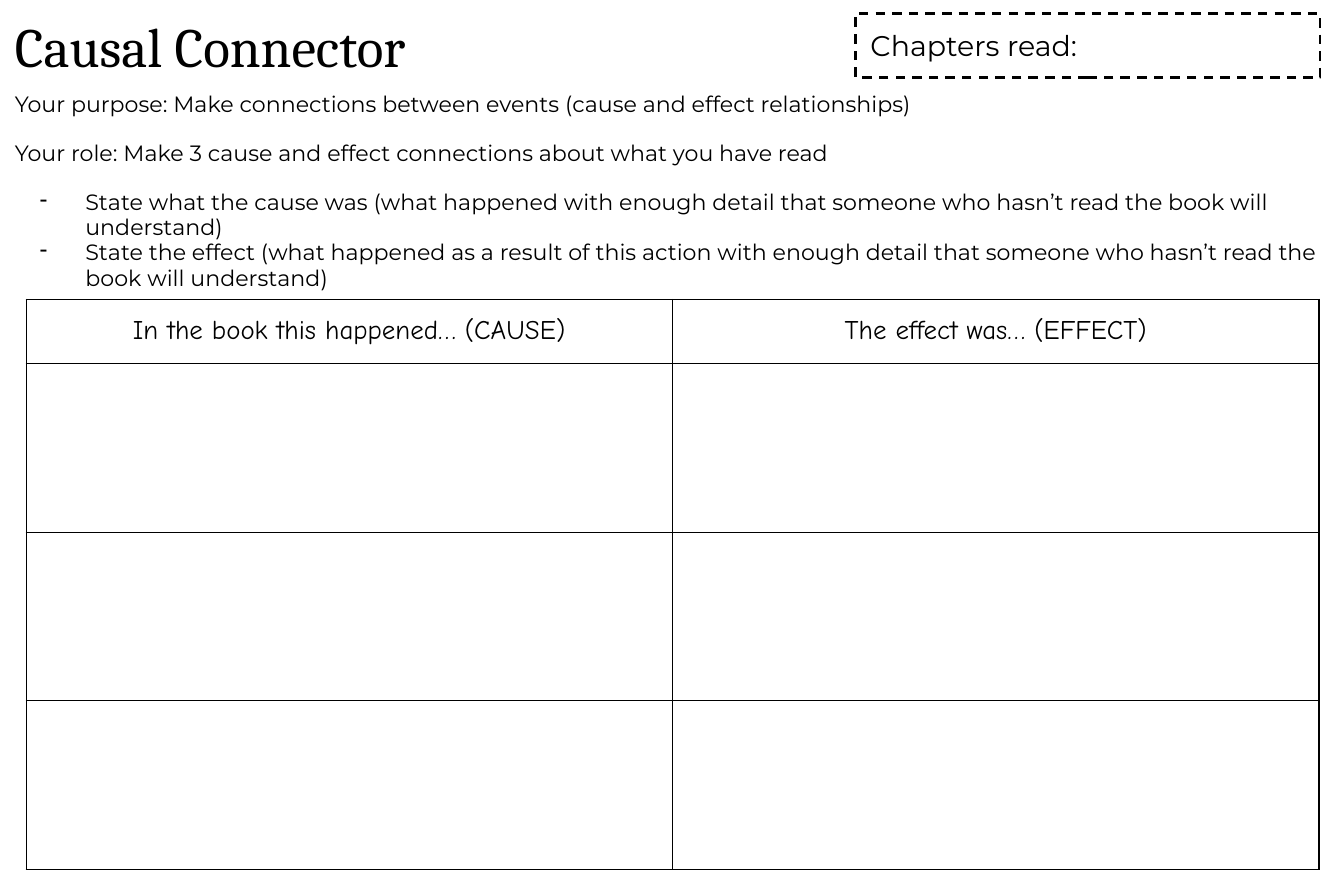
from dataclasses import dataclass

from lxml import etree
from pptx import Presentation
from pptx.dml.color import RGBColor
from pptx.enum.dml import MSO_LINE
from pptx.enum.shapes import MSO_SHAPE
from pptx.enum.text import MSO_ANCHOR, MSO_AUTO_SIZE, PP_ALIGN
from pptx.oxml.ns import qn
from pptx.util import Inches, Pt

DASH = MSO_LINE.DASH
RECT = MSO_SHAPE.RECTANGLE
TOP, MIDDLE = MSO_ANCHOR.TOP, MSO_ANCHOR.MIDDLE
GROW = MSO_AUTO_SIZE.SHAPE_TO_FIT_TEXT
LEFT, CENTER = PP_ALIGN.LEFT, PP_ALIGN.CENTER


@dataclass(frozen=True)
class Theme:
    """Colours, type styles and spacing of the worksheet."""

    ink: str = "000000"
    title: tuple = ("Cambria", 35)
    body: tuple = ("Montserrat", 14)
    label: tuple = ("Montserrat", 18)
    head: tuple = ("Comic Neue", 17)
    inset: float = 0.13
    dash: float = 1.5
    rule: float = 0.75
    gap: float = 15
    lead: float = 0.95


THEME = Theme()
INK = RGBColor.from_string(THEME.ink)
WIDTH, HEIGHT = Inches(11.81), Inches(7.87)

GOALS = [
    "Your purpose: Make connections between events (cause and effect relationships)",
    "Your role: Make 3 cause and effect connections about what you have read",
]
STEPS = [
    "State what the cause was (what happened with enough detail that someone who hasn’t read the book will understand)",
    "State the effect (what happened as a result of this action with enough detail that someone who hasn’t read the book will understand)",
]
HEADS = ["In the book this happened… (CAUSE)", "The effect was… (EFFECT)"]


def area(left, top, width, height):
    """Turn percentages of the slide into a box."""
    return (int(WIDTH * left / 100), int(HEIGHT * top / 100),
            int(WIDTH * width / 100), int(HEIGHT * height / 100))


def style(para, kind, align=LEFT):
    """Set the font and alignment of a paragraph."""
    para.alignment = align
    for run in para.runs:
        run.font.name, size = kind
        run.font.size = Pt(size)
        run.font.color.rgb = INK


def prepare(frame, anchor):
    """Set wrapping, insets and anchor of a text frame."""
    frame.word_wrap = True
    frame.vertical_anchor = anchor
    frame.margin_left = frame.margin_right = Inches(THEME.inset)
    frame.margin_top = frame.margin_bottom = Inches(THEME.inset)


def paint(parent, tag):
    """Add an ink-coloured element to a parent."""
    node = etree.SubElement(parent, qn(tag))
    etree.SubElement(node, qn("a:srgbClr"), val=THEME.ink)


def add_title(slide, box):
    """Place the worksheet title."""
    frame = slide.shapes.add_textbox(*box).text_frame
    prepare(frame, MIDDLE)
    frame.text = "Causal Connector"
    style(frame.paragraphs[0], THEME.title)


def add_dash(para):
    """Give a paragraph a hanging dash bullet."""
    props = para._p.get_or_add_pPr()
    props.set("marL", str(Inches(0.62)))
    props.set("indent", str(Inches(-0.4)))
    paint(props, "a:buClr")
    etree.SubElement(props, qn("a:buChar"), char="-")


def add_guide(slide, box):
    """Place the purpose, the role and the steps."""
    frame = slide.shapes.add_textbox(*box).text_frame
    prepare(frame, TOP)
    frame.text = "\n".join(GOALS + STEPS)
    for index, para in enumerate(frame.paragraphs):
        style(para, THEME.body)
        para.line_spacing = THEME.lead
        para.space_before = Pt(THEME.gap if index in (1, 2) else 0)
        if index >= len(GOALS):
            add_dash(para)


def add_label(slide, box):
    """Place the dashed box for the chapters read."""
    shape = slide.shapes.add_shape(RECT, *box)
    shape.shadow.inherit = False
    shape.fill.background()
    shape.line.color.rgb = INK
    shape.line.width = Pt(THEME.dash)
    shape.line.dash_style = DASH
    frame = shape.text_frame
    prepare(frame, MIDDLE)
    frame.auto_size = GROW
    frame.text = "Chapters read:"
    style(frame.paragraphs[0], THEME.label)


def add_rules(cell):
    """Draw the four borders of an unfilled cell."""
    props = cell._tc.get_or_add_tcPr()
    for side in ("L", "R", "T", "B"):
        line = etree.SubElement(props, qn(f"a:ln{side}"), w=str(Pt(THEME.rule)))
        paint(line, "a:solidFill")
    cell.fill.background()


def add_chart(slide, box, count=3):
    """Place the cause and effect table with empty answer rows."""
    left, top, width, height = box
    table = slide.shapes.add_table(count + 1, len(HEADS), *box).table
    first = int(height * 0.11)
    for column in table.columns:
        column.width = width // len(HEADS)
    for index, row in enumerate(table.rows):
        row.height = (height - first) // count if index else first
    for cell in table.iter_cells():
        add_rules(cell)
        cell.margin_left = cell.margin_right = Inches(0.12)
        cell.margin_top = cell.margin_bottom = Inches(0.14)
    for index, text in enumerate(HEADS):
        frame = table.cell(0, index).text_frame
        frame.text = text
        style(frame.paragraphs[0], THEME.head, CENTER)


def main():
    """Build and save the worksheet."""
    deck = Presentation()
    deck.slide_width, deck.slide_height = WIDTH, HEIGHT
    slide = deck.slides.add_slide(deck.slide_layouts[6])
    add_title(slide, area(0, -0.51, 93.23, 11.18))
    add_guide(slide, area(0, 8.64, 100, 26.43))
    add_label(slide, area(63.67, 1.52, 34.55, 7.12))
    add_chart(slide, area(1.95, 33.42, 96.19, 63.4))
    deck.save("out.pptx")


if __name__ == "__main__":
    main()
